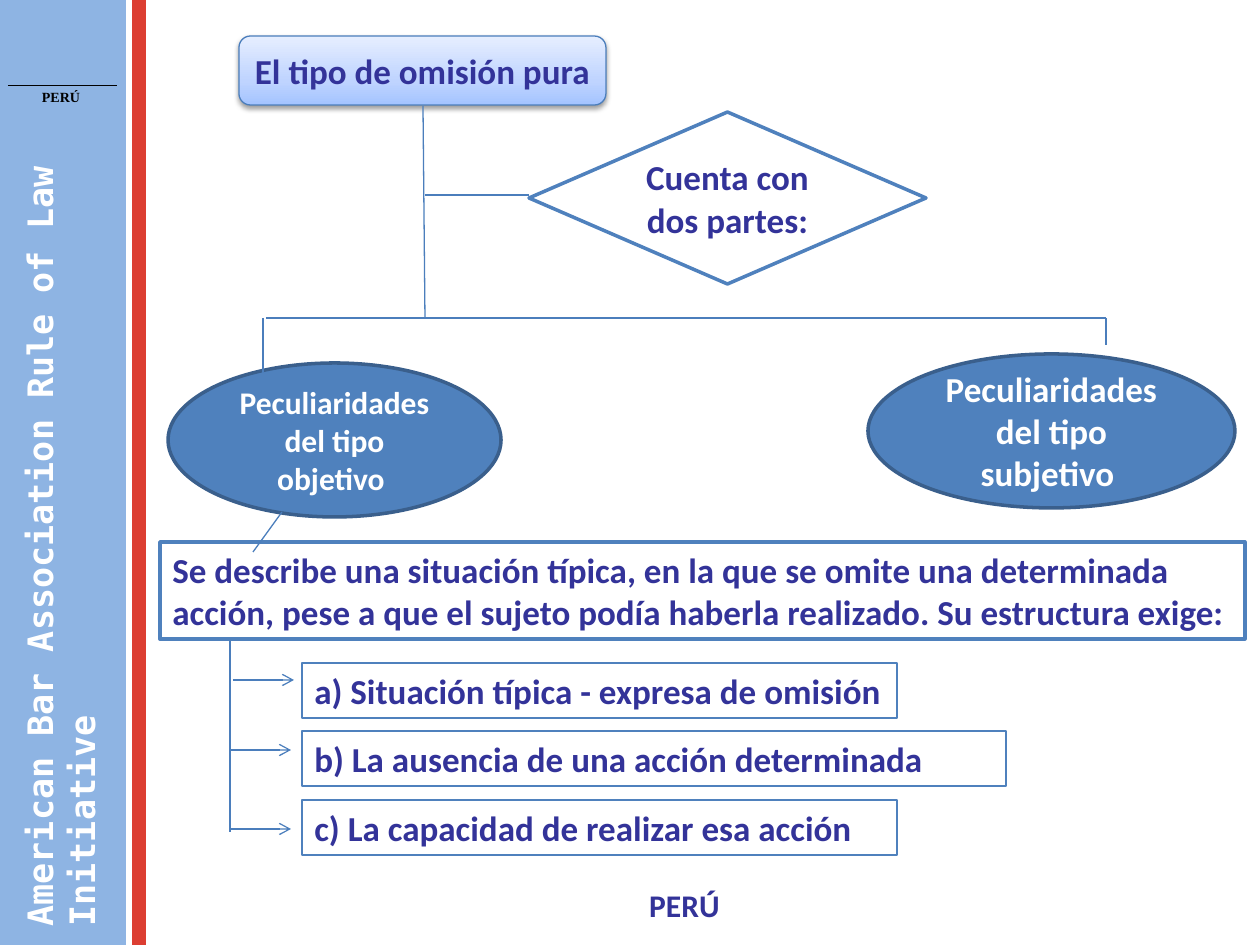
from dataclasses import dataclass
from lxml.etree import SubElement
from pptx import Presentation
from pptx.dml.color import RGBColor
from pptx.enum.shapes import MSO_CONNECTOR, MSO_SHAPE
from pptx.enum.text import MSO_ANCHOR, PP_ALIGN
from pptx.oxml import parse_xml
from pptx.oxml.ns import nsdecls, qn
from pptx.util import Emu, Pt


@dataclass(frozen=True)
class Theme:
    band: str = "8EB4E3"
    stripe: str = "DC3E32"
    ink: str = "333399"
    blue: str = "4F81BD"
    wire: str = "4B7EBC"
    rim: str = "3A5F8C"
    white: str = "FFFFFF"
    black: str = "000000"
    body: str = "Calibri"
    mono: str = "DejaVu Sans Mono"
    serif: str = "Times New Roman"
    large: int = 20
    medium: int = 18
    tiny: int = 8
    thick: float = 2
    thin: float = 0.75
    hair: float = 0.25


THEME = Theme()
WIDTH, HEIGHT, PX_PER_INCH = 1260, 945, 126

# Content: boxes are left, top, width, height in px
SIDEBAR = "American Bar Association Rule of Law Initiative"
COUNTRY = "PERÚ"
TITLE = "El tipo de omisión pura "
PARTS = "Cuenta con dos partes:"
BRANCHES = [
    ("Peculiaridades del tipo objetivo ", (168, 363, 333, 154), THEME.medium),
    ("Peculiaridades del tipo subjetivo ", (868, 354, 367, 154), THEME.large),
]
DESCRIPTION = ("Se describe una situación típica, en la que se omite una determinada "
               "acción, pese a que el sujeto podía haberla realizado. "
               "Su estructura exige:")
# Text, box top, box width, arrow start x, arrow y
REQUIREMENTS = [
    ("a) Situación típica - expresa de omisión", 663, 595, 233, 680),
    ("b) La ausencia de una acción determinada", 731, 704, 230, 750),
    ("c) La capacidad de realizar esa acción", 800, 595, 230, 829),
]
TREE = [
    (423, 106, 425, 318),   # trunk
    (425, 195, 529, 195),   # to the diamond
    (266, 318, 1106, 318),  # crossbar
    (263, 318, 263, 373),
    (1106, 318, 1106, 345),
]
LIST_LINKS = [(282, 512, 253, 552), (230, 641, 230, 832)]


def px(n):
    return Emu(round(n * 914400 / PX_PER_INCH))


def rgb(color):
    return RGBColor.from_string(color)


def write(shape, text, size, color, font=THEME.body, align=PP_ALIGN.LEFT,
          anchor=MSO_ANCHOR.TOP):
    frame = shape.text_frame
    frame.word_wrap = True
    frame.vertical_anchor = anchor
    frame.text = text
    paragraph = frame.paragraphs[0]
    paragraph.alignment = align
    for run in paragraph.runs:
        run.font.name, run.font.size, run.font.bold = font, Pt(size), True
        run.font.color.rgb = rgb(color)


def add_box(kind, box, fill, line, weight):
    shape = slide.shapes.add_shape(kind, *map(px, box))
    shape.shadow.inherit = False
    if fill:
        shape.fill.solid()
        shape.fill.fore_color.rgb = rgb(fill)
    else:
        shape.fill.background()
    shape.line.color.rgb = rgb(line)
    shape.line.width = Pt(weight)
    return shape


def add_label(box, *args, **kwargs):
    label = slide.shapes.add_textbox(*map(px, box))
    write(label, *args, **kwargs)
    return label


def add_line(ends, color=THEME.wire, weight=THEME.thin, arrow=False):
    line = slide.shapes.add_connector(MSO_CONNECTOR.STRAIGHT, *map(px, ends))
    line.line.color.rgb = rgb(color)
    line.line.width = Pt(weight)
    properties = line._element.spPr
    if arrow:
        SubElement(properties.find(qn("a:ln")), qn("a:tailEnd"), type="arrow")
    SubElement(properties, qn("a:effectLst"))


presentation = Presentation()
presentation.slide_width, presentation.slide_height = px(WIDTH), px(HEIGHT)
slide = presentation.slides.add_slide(presentation.slide_layouts[6])
CENTERED = dict(align=PP_ALIGN.CENTER, anchor=MSO_ANCHOR.MIDDLE)

# Sidebar and footer
add_box(MSO_SHAPE.RECTANGLE, (0, 0, 124, HEIGHT), THEME.band, THEME.band, THEME.thick)
sidebar = add_label((26, 110, 68, 829), SIDEBAR, THEME.large, THEME.white,
                    THEME.mono, anchor=MSO_ANCHOR.MIDDLE)
sidebar.text_frame._txBody.bodyPr.set("vert", "vert270")
add_label((471, 880, 427, 50), COUNTRY, THEME.medium, THEME.ink, align=PP_ALIGN.CENTER)
add_box(MSO_SHAPE.RECTANGLE, (134, 0, 10, HEIGHT), THEME.stripe, THEME.stripe, THEME.thick)
add_label((8, 82, 106, 30), COUNTRY, THEME.tiny, THEME.black, THEME.serif,
          align=PP_ALIGN.CENTER)
add_line((8, 85, 117, 85), THEME.black, THEME.hair)

# Title with gradient and soft shadow
title = add_box(MSO_SHAPE.ROUNDED_RECTANGLE, (239, 36, 367, 69), None, THEME.wire, THEME.thin)
title.fill.gradient()
properties = title._element.spPr
properties.replace(properties.find(qn("a:gradFill")), parse_xml(
    f'<a:gradFill {nsdecls("a")} rotWithShape="1"><a:gsLst>'
    '<a:gs pos="0"><a:srgbClr val="A4C4FF"/></a:gs>'
    '<a:gs pos="35000"><a:srgbClr val="BFD4FF"/></a:gs>'
    '<a:gs pos="100000"><a:srgbClr val="E6EEFF"/></a:gs>'
    '</a:gsLst><a:lin ang="16200000" scaled="1"/></a:gradFill>'))
shadow = SubElement(properties.find(qn("a:effectLst")), qn("a:outerShdw"),
                    blurRad=str(Pt(3.1)), dist=str(Pt(1.6)), dir="5400000", rotWithShape="0")
shade = SubElement(shadow, qn("a:srgbClr"), val=THEME.black)
SubElement(shade, qn("a:alpha"), val="38000")
write(title, TITLE, THEME.large, THEME.ink, **CENTERED)

# Tree: two parts and their branches
diamond = add_box(MSO_SHAPE.DIAMOND, (529, 112, 397, 172), THEME.white, THEME.blue, THEME.thick)
write(diamond, PARTS, THEME.large, THEME.ink, **CENTERED)
for text, box, size in BRANCHES:
    branch = add_box(MSO_SHAPE.OVAL, box, THEME.blue, THEME.rim, THEME.thick)
    write(branch, text, size, THEME.white, **CENTERED)
for ends in TREE:
    add_line(ends)

# Description and its requirements
description = add_box(MSO_SHAPE.RECTANGLE, (160, 542, 1085, 97), THEME.white,
                      THEME.blue, THEME.thick)
write(description, DESCRIPTION, THEME.large, THEME.ink)
for ends in LIST_LINKS:
    add_line(ends)
for text, top, width, start, y in REQUIREMENTS:
    requirement = add_box(MSO_SHAPE.RECTANGLE, (302, top, width, 55), None,
                          THEME.blue, THEME.thin)
    write(requirement, text, THEME.large, THEME.ink)
    add_line((start, y, start + 61, y), arrow=True)

presentation.save("out.pptx")
